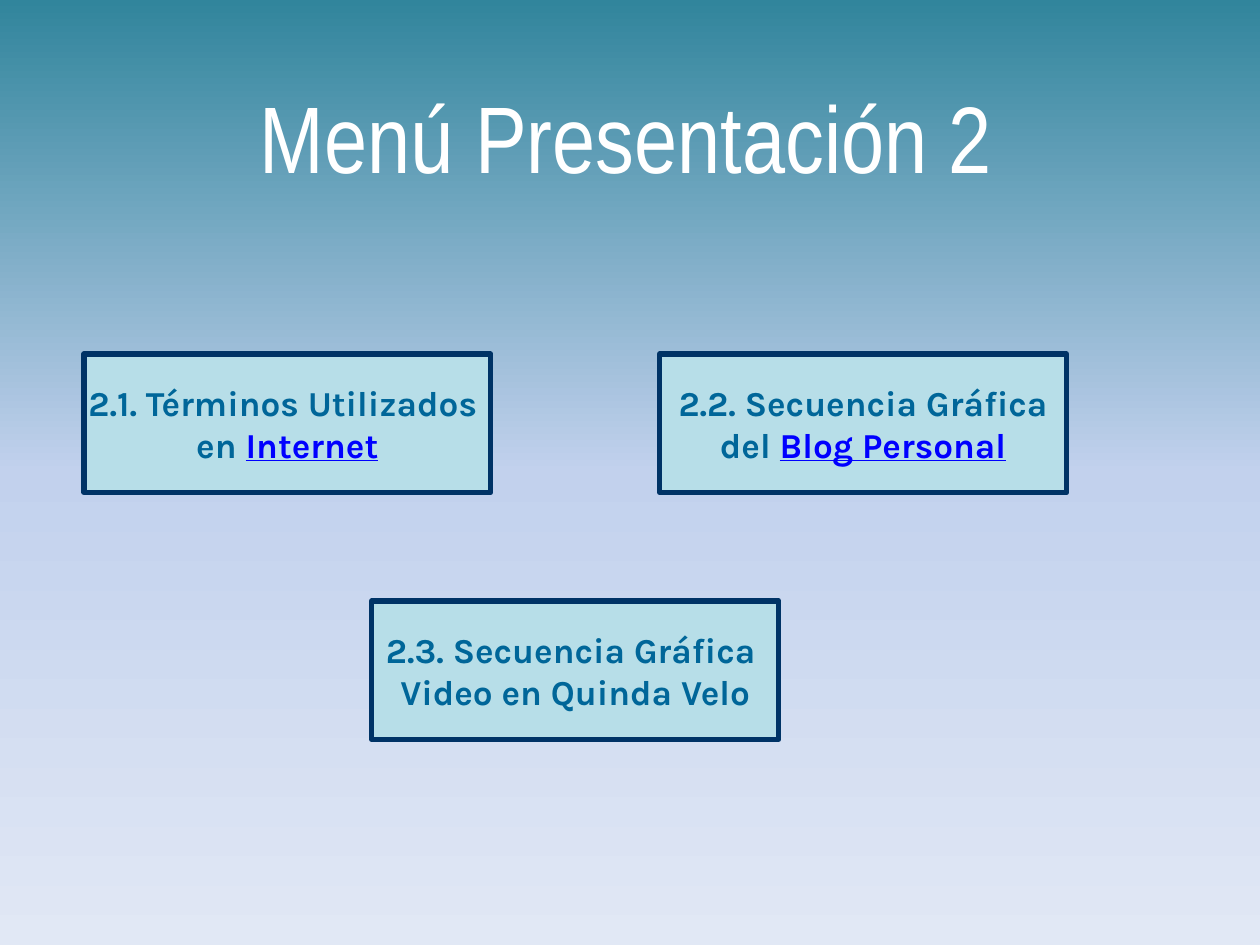
import copy
from dataclasses import dataclass

import pptx
import pptx.dml.color
import pptx.enum.shapes
import pptx.enum.text
import pptx.oxml.ns
import pptx.slide
import pptx.util

Pt = pptx.util.Pt
RGBColor = pptx.dml.color.RGBColor

WHITE = RGBColor(0xFF, 0xFF, 0xFF)
BOX_FILL = RGBColor(0xB7, 0xDE, 0xE8)
BOX_BORDER = RGBColor(0x00, 0x33, 0x66)
BOX_TEXT = RGBColor(0x00, 0x66, 0x99)
LINK_TEXT = RGBColor(0x00, 0x00, 0xFF)
SKY_TOP = RGBColor(0x31, 0x85, 0x9C)
SKY_MIDDLE = RGBColor(0xC2, 0xD1, 0xED)
SKY_BOTTOM = RGBColor(0xE1, 0xE8, 0xF5)

BOX_WIDTH = 232.5
BOX_HEIGHT = 79.2
UPPER_ROW = 202.3
LOWER_ROW = 343.4


@dataclass(frozen=True)
class MenuBox:
    left: float
    top: float
    heading: str
    detail: str
    link: str = ""


MENU_BOXES = [
    MenuBox(48, UPPER_ROW, "2.1. Términos Utilizados ", "en ", "Internet"),
    MenuBox(377, UPPER_ROW, "2.2. Secuencia Gráfica", "del ", "Blog Personal"),
    MenuBox(212.5, LOWER_ROW, "2.3. Secuencia Gráfica ", "Video en Quinda Velo"),
]


def paint_background(slide: pptx.slide.Slide) -> None:
    fill = slide.background.fill
    fill.gradient()
    fill.gradient_angle = 270
    stop_list = next(slide.element.iter(pptx.oxml.ns.qn("a:gsLst")))
    stop_list.append(copy.deepcopy(stop_list[-1]))
    colors = (SKY_TOP, SKY_MIDDLE, SKY_BOTTOM)
    for stop, color, position in zip(fill.gradient_stops, colors, (0, 0.5, 1)):
        stop.color.rgb = color
        stop.position = position


def write_title(slide: pptx.slide.Slide, text: str) -> None:
    title = slide.shapes.title
    title.left, title.top = Pt(33.8), Pt(62)
    title.width, title.height = Pt(648), Pt(90)
    frame = title.text_frame
    frame.text = text
    frame.auto_size = pptx.enum.text.MSO_AUTO_SIZE.NONE
    frame.vertical_anchor = pptx.enum.text.MSO_ANCHOR.MIDDLE
    frame.margin_top, frame.margin_bottom = Pt(0), Pt(59)
    paragraph = frame.paragraphs[0]
    paragraph.alignment = pptx.enum.text.PP_ALIGN.CENTER
    font = paragraph.runs[0].font
    font.name, font.size = "Arial Narrow", Pt(54)
    font.color.rgb = WHITE


def draw_menu_box(slide: pptx.slide.Slide, box: MenuBox) -> None:
    shape = slide.shapes.add_shape(
        pptx.enum.shapes.MSO_SHAPE.RECTANGLE,
        Pt(box.left), Pt(box.top), Pt(BOX_WIDTH), Pt(BOX_HEIGHT),
    )
    shape.shadow.inherit = False
    shape.fill.solid()
    shape.fill.fore_color.rgb = BOX_FILL
    shape.line.color.rgb = BOX_BORDER
    shape.line.width = Pt(3)
    frame = shape.text_frame
    frame.text = f"{box.heading}\n{box.detail}"
    frame.word_wrap = False
    frame.vertical_anchor = pptx.enum.text.MSO_ANCHOR.MIDDLE
    if box.link:
        frame.paragraphs[-1].add_run().text = box.link
    for paragraph in frame.paragraphs:
        paragraph.alignment = pptx.enum.text.PP_ALIGN.CENTER
        for run in paragraph.runs:
            run.font.name, run.font.size, run.font.bold = "Karla", Pt(20), True
            run.font.color.rgb = BOX_TEXT
    if box.link:
        link_font = frame.paragraphs[-1].runs[-1].font
        link_font.color.rgb = LINK_TEXT
        link_font.underline = True


def main() -> None:
    presentation = pptx.Presentation()
    presentation.slide_width, presentation.slide_height = Pt(720), Pt(540)
    slide = presentation.slides.add_slide(presentation.slide_layouts[5])
    paint_background(slide)
    write_title(slide, "Menú Presentación 2")
    for box in MENU_BOXES:
        draw_menu_box(slide, box)
    presentation.save("out.pptx")


if __name__ == "__main__":
    main()
